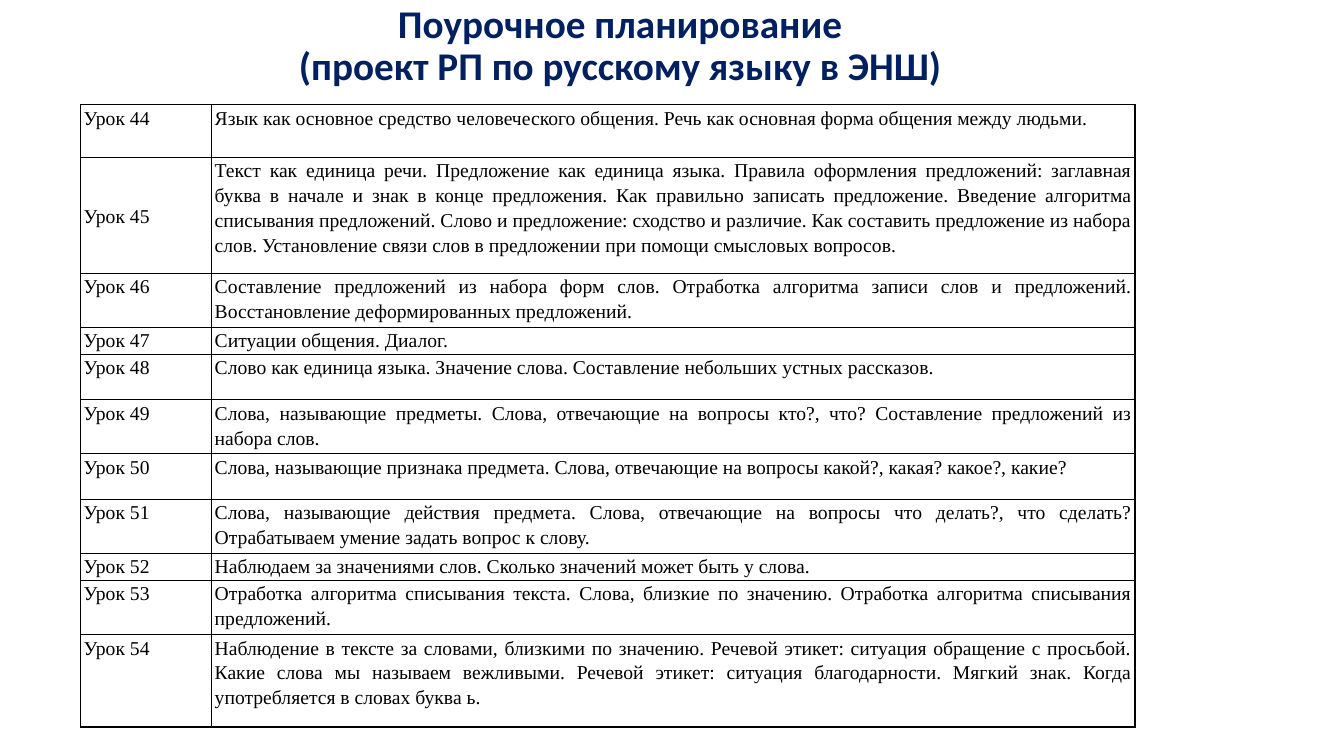
from pptx import Presentation
from pptx import util as u
from pptx.dml import color
from pptx.enum import text
from pptx.oxml import ns
from lxml import etree

COLORS = {"title": "002060", "ink": "000000", "border": "000000"}
COLUMNS, ROWS = 133.33, 75
TABLE_COLUMNS = (13, 91.6)
LESSONS = [
    (5.2, "Язык как основное средство человеческого общения. Речь как основная форма общения между людьми."),
    (11.5, "Текст как единица речи. Предложение как единица языка. Правила оформления предложений: "
           "заглавная буква в начале и знак в конце предложения. Как правильно записать предложение. "
           "Введение алгоритма списывания предложений. Слово и предложение: сходство и различие. "
           "Как составить предложение из набора слов. Установление связи слов в предложении "
           "при помощи смысловых вопросов."),
    (4.5, "Составление предложений из набора форм слов. Отработка алгоритма записи слов и предложений. "
          "Восстановление деформированных предложений."),
    (2.2, "Ситуации общения. Диалог."),
    (4.5, "Слово как единица языка. Значение слова. Составление небольших устных рассказов."),
    (4.5, "Слова, называющие предметы. Слова, отвечающие на вопросы кто?, что? "
          "Составление предложений из набора слов."),
    (4.5, "Слова, называющие признака предмета. Слова, отвечающие на вопросы какой?, какая? какое?, какие?"),
    (4.5, "Слова, называющие действия предмета. Слова, отвечающие на вопросы что делать?, что сделать? "
          "Отрабатываем умение задать вопрос к слову."),
    (2.2, "Наблюдаем за значениями слов. Сколько значений может быть у слова."),
    (4.5, "Отработка алгоритма списывания текста. Слова, близкие по значению. "
          "Отработка алгоритма списывания предложений."),
    (9.2, "Наблюдение в тексте за словами, близкими по значению. Речевой этикет: ситуация обращение "
          "с просьбой. Какие слова мы называем вежливыми. Речевой этикет: ситуация благодарности. "
          "Мягкий знак. Когда употребляется в словах буква ь."),
]
FIRST_LESSON = 44
CENTERED_LESSON = 45


def write(para, lines, font="Times New Roman", size=14, ink="ink", bold=False,
          align=text.PP_ALIGN.JUSTIFY, spacing=1.15, after=10):
    """Write lines of formatted text into one paragraph."""
    para.alignment, para.line_spacing, para.space_after = align, spacing, u.Pt(after)
    for index, line in enumerate(lines):
        if index:
            para.add_line_break()
        span = para.add_run()
        span.text = line
        span.font.name, span.font.size, span.font.bold = font, u.Pt(size), bold
        span.font.color.rgb = color.RGBColor.from_string(COLORS[ink])


class Page:
    """Holds the grid and the current slide."""

    def __init__(self, deck):
        """Add a blank slide and size its grid."""
        self.slide = deck.slides.add_slide(deck.slide_layouts[6])
        self.column = deck.slide_width / COLUMNS
        self.row = deck.slide_height / ROWS

    def place(self, left, top, width, height):
        """Turn grid units into slide lengths."""
        return (round(left * self.column), round(top * self.row),
                round(width * self.column), round(height * self.row))

    def title(self, area, lines):
        """Add the centred heading."""
        frame = self.slide.shapes.add_textbox(*self.place(*area)).text_frame
        frame.word_wrap = True
        frame.vertical_anchor = text.MSO_ANCHOR.MIDDLE
        write(frame.paragraphs[0], lines, font="Calibri", size=28, ink="title", bold=True,
              align=text.PP_ALIGN.CENTER, spacing=0.9, after=0)

    def cell(self, cell, content, anchor):
        """Format one table cell with borders and text."""
        cell.margin_left = cell.margin_right = u.Inches(0.03)
        cell.margin_top = cell.margin_bottom = 0
        cell.vertical_anchor = anchor
        properties = cell._tc.get_or_add_tcPr()
        for side in ("a:lnL", "a:lnR", "a:lnT", "a:lnB"):
            line = etree.SubElement(properties, ns.qn(side), w=str(u.Pt(1)))
            fill = etree.SubElement(line, ns.qn("a:solidFill"))
            etree.SubElement(fill, ns.qn("a:srgbClr"), val=COLORS["border"])
        cell.fill.background()
        write(cell.text_frame.paragraphs[0], [content])

    def lessons(self, left, top):
        """Add the table of numbered lessons."""
        height = sum(rows for rows, topic in LESSONS)
        area = self.place(left, top, sum(TABLE_COLUMNS), height)
        table = self.slide.shapes.add_table(len(LESSONS), len(TABLE_COLUMNS), *area).table
        table.first_row = table.horz_banding = False
        for column, width in zip(table.columns, TABLE_COLUMNS):
            column.width = round(width * self.column)
        for index, (rows, topic) in enumerate(LESSONS):
            number = FIRST_LESSON + index
            anchor = text.MSO_ANCHOR.MIDDLE if number == CENTERED_LESSON else text.MSO_ANCHOR.TOP
            table.rows[index].height = round(rows * self.row)
            self.cell(table.cell(index, 0), f"Урок {number}", anchor)
            self.cell(table.cell(index, 1), topic, text.MSO_ANCHOR.TOP)


def main():
    """Build and save the deck."""
    deck = Presentation()
    deck.slide_width, deck.slide_height = u.Inches(13.33), u.Inches(7.5)
    page = Page(deck)
    page.title((4, 2.9, 115, 3.5), ["Поурочное планирование", "(проект РП по русскому языку в ЭНШ)"])
    page.lessons(8, 10.4)
    deck.save("out.pptx")


if __name__ == "__main__":
    main()
